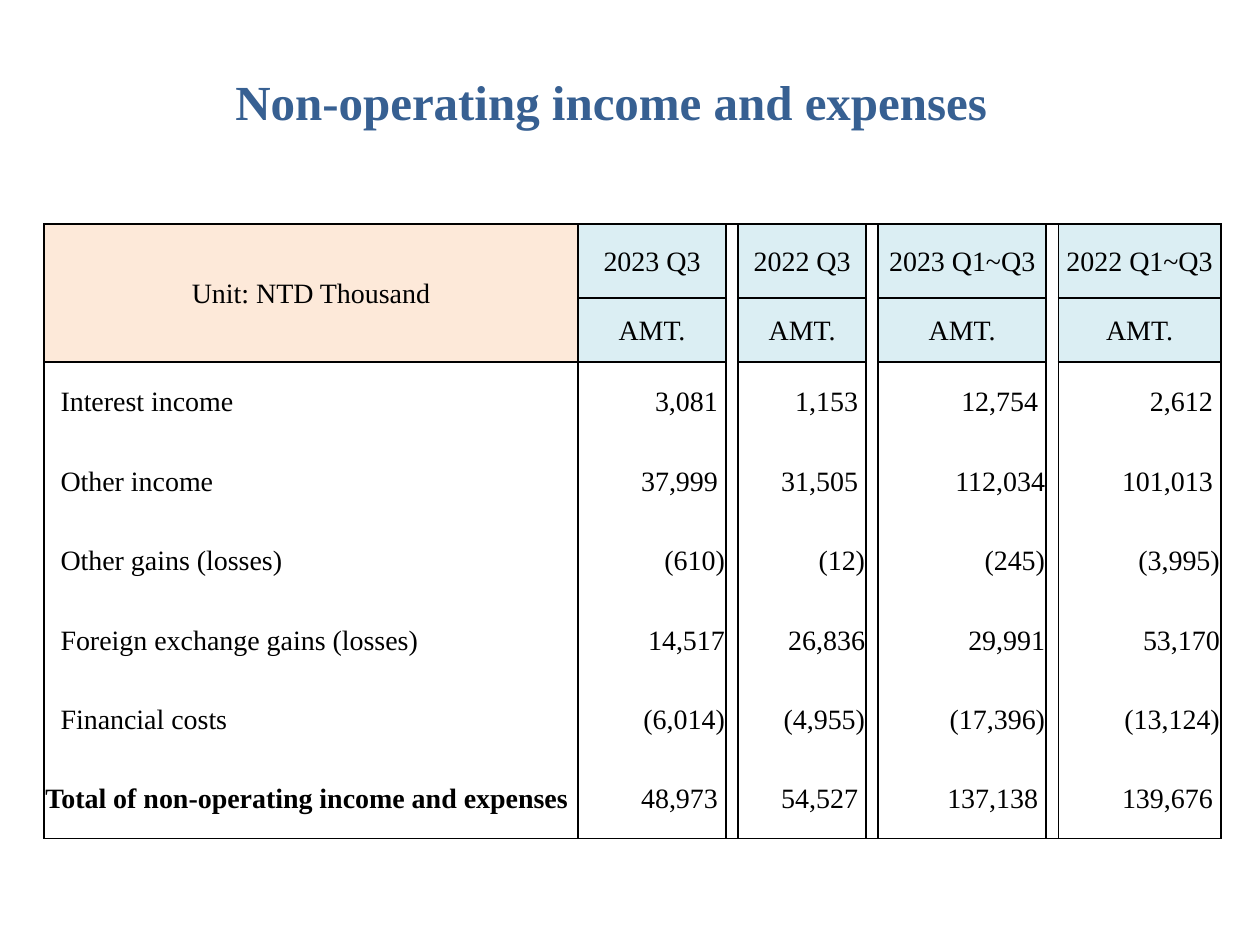
from lxml import etree
from pptx import Presentation, util as u
from pptx.dml.color import RGBColor
from pptx.enum import text
from pptx.oxml import ns

BLACK = RGBColor(0x00, 0x00, 0x00)
TITLE_BLUE = RGBColor(0x37, 0x60, 0x92)
PEACH = RGBColor(0xFD, 0xE9, 0xD9)
PALE_BLUE = RGBColor(0xDB, 0xEE, 0xF3)

PERIODS = ["2023 Q3", "2022 Q3", "2023 Q1~Q3", "2022 Q1~Q3"]
ITEMS = [
    ("Interest income", "3,081 ", "1,153 ", "12,754 ", "2,612 "),
    ("Other income", "37,999 ", "31,505 ", "112,034", "101,013 "),
    ("Other gains (losses)", "(610)", "(12)", "(245)", "(3,995)"),
    ("Foreign exchange gains (losses)", "14,517", "26,836", "29,991", "53,170"),
    ("Financial costs", "(6,014)", "(4,955)", "(17,396)", "(13,124)"),
    ("Total of non-operating income and expenses",
     "48,973 ", "54,527 ", "137,138 ", "139,676 "),
]
GAP = 6.9
COLUMN_WIDTHS = [305.1, 84.6, GAP, 73.2, GAP, 96, GAP, 93]
HEADER_HEIGHTS = [42.3, 36.6]
ITEM_HEIGHT = 45.4
LABEL_INDENT = 8.7


class Report:
    font_name = "Times New Roman"

    def __init__(self, slide):
        self.slide = slide

    def style(self, paragraph, size, color, bold, align):
        paragraph.alignment = align
        paragraph.font.name = self.font_name
        paragraph.font.size = u.Pt(size)
        paragraph.font.bold = bold
        paragraph.font.color.rgb = color

    def title(self, wording, left, top, width, height):
        frame = self.slide.shapes.add_textbox(
            u.Pt(left), u.Pt(top), u.Pt(width), u.Pt(height)).text_frame
        frame.word_wrap = True
        frame.text = wording
        self.style(frame.paragraphs[0], 28, TITLE_BLUE, True, text.PP_ALIGN.LEFT)

    def table(self, left, top, widths, heights):
        table = self.slide.shapes.add_table(
            len(heights), len(widths), u.Pt(left), u.Pt(top),
            u.Pt(sum(widths)), u.Pt(sum(heights))).table
        table.first_row = table.horz_banding = False
        for column, width in zip(table.columns, widths):
            column.width = u.Pt(width)
        for row, height in zip(table.rows, heights):
            row.height = u.Pt(height)
        return table

    def cell(self, cell, wording="", sides="LR", fill=None, bold=False,
             align=text.PP_ALIGN.CENTER, indent=0):
        cell.margin_left = u.Pt(0.7 + indent)
        cell.margin_right = cell.margin_top = u.Pt(0.7)
        cell.margin_bottom = 0
        cell.vertical_anchor = text.MSO_ANCHOR.MIDDLE
        cell.text = wording
        self.style(cell.text_frame.paragraphs[0], 16, BLACK, bold, align)
        if fill is None:
            cell.fill.background()
        else:
            cell.fill.solid()
            cell.fill.fore_color.rgb = fill
        self.borders(cell, sides)

    def borders(self, cell, sides):
        properties = cell._tc.get_or_add_tcPr()
        for position, side in enumerate("LRTB"):
            line = etree.Element(ns.qn("a:ln" + side), w=str(u.Pt(1)))
            if side in sides:
                paint = etree.SubElement(line, ns.qn("a:solidFill"))
                etree.SubElement(paint, ns.qn("a:srgbClr"), val=str(BLACK))
            else:
                etree.SubElement(line, ns.qn("a:noFill"))
            properties.insert(position, line)


def main():
    deck = Presentation()
    deck.slide_width, deck.slide_height = u.Pt(720), u.Pt(540)
    report = Report(deck.slides.add_slide(deck.slide_layouts[6]))
    report.title("Non-operating income and expenses", 127.4, 37.4, 584, 69)

    heights = HEADER_HEIGHTS + [ITEM_HEIGHT] * len(ITEMS)
    table = report.table(25.2, 128, COLUMN_WIDTHS, heights)
    last = len(heights) - 1

    table.cell(0, 0).merge(table.cell(1, 0))
    report.cell(table.cell(0, 0), "Unit: NTD Thousand", "LRTB", PEACH)
    report.borders(table.cell(1, 0), "LRB")

    for index, period in enumerate(PERIODS):
        for row, heading in enumerate((period, "AMT.")):
            report.cell(table.cell(row, 2 * index + 1), heading, "LRTB", PALE_BLUE)

    edges = {2: "LRT", last: "LRB"}
    for row, (label, *amounts) in enumerate(ITEMS, start=2):
        sides = edges.get(row, "LR")
        total = row == last
        report.cell(table.cell(row, 0), label, sides, bold=total,
                    align=text.PP_ALIGN.LEFT, indent=0 if total else LABEL_INDENT)
        for index, amount in enumerate(amounts):
            report.cell(table.cell(row, 2 * index + 1), amount, sides,
                        align=text.PP_ALIGN.RIGHT)

    gap_edges = {0: "LRT", last: "LRB"}
    for row in range(len(heights)):
        for column in range(2, len(COLUMN_WIDTHS), 2):
            report.cell(table.cell(row, column), sides=gap_edges.get(row, "LR"))

    deck.save("out.pptx")


if __name__ == "__main__":
    main()
